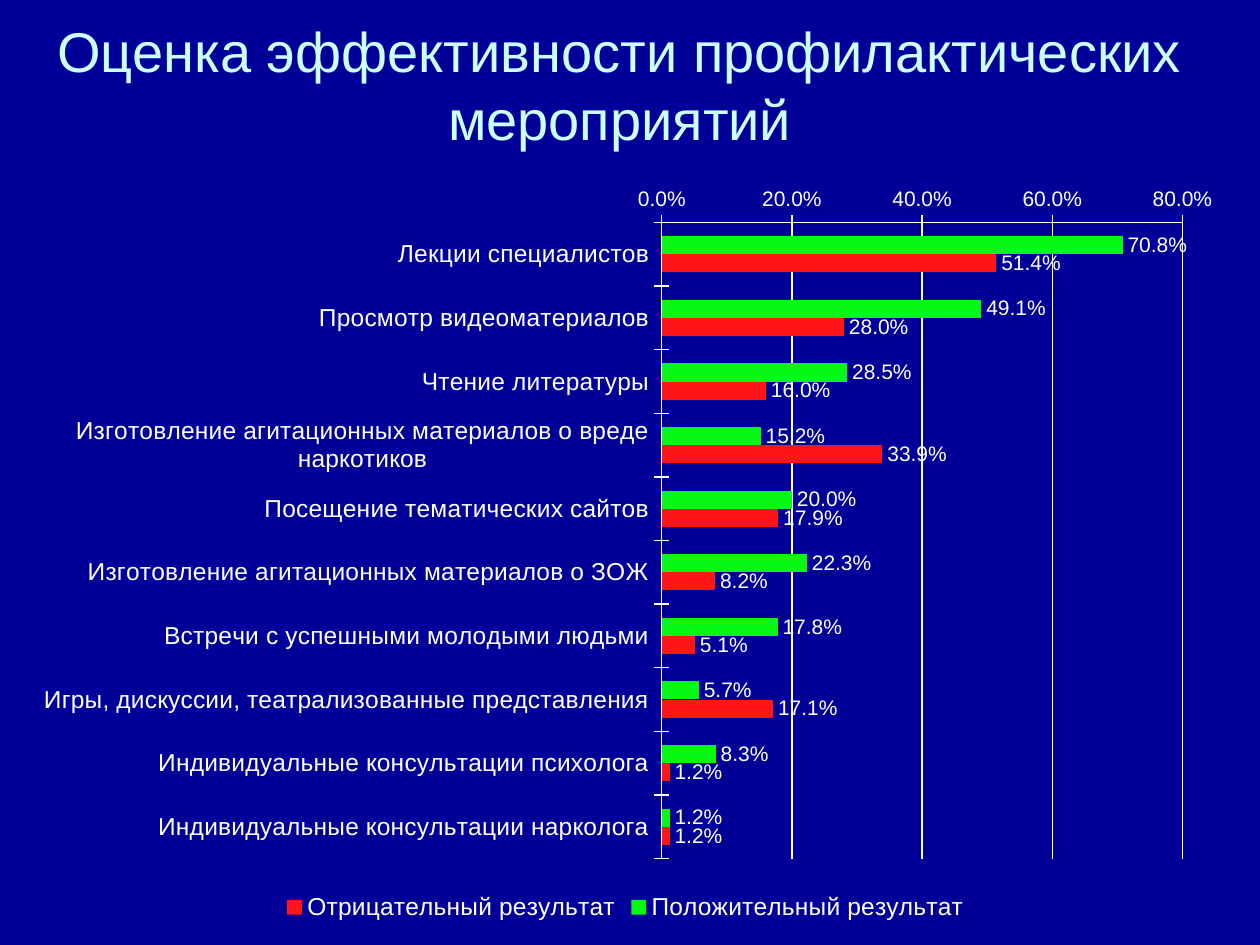
from dataclasses import dataclass

from lxml import etree
from pptx import Presentation
from pptx.chart.data import CategoryChartData
from pptx.dml.color import RGBColor
from pptx.enum import chart as ch, text
from pptx.util import Inches, Pt


@dataclass(frozen=True)
class Theme:
    font: str = "Arial"
    background: str = "000099"
    title: str = "CCFFFF"
    ink: str = "FFFFFF"
    positive: str = "07F913"
    negative: str = "FF1515"
    title_size: int = 32
    chart_size: int = 18
    label_size: int = 14
    value_size: int = 12
    line: float = 0.75


THEME = Theme()
WIDTH, HEIGHT = 10, 7.5
PERCENT = "0.0%"

# Regions as shares of the slide: left, top, width, height
TITLE_BOX = (0.023, 0.021, 0.938, 0.136)
CHART_BOX = (0.016, 0.188, 0.961, 0.792)
# Bar area as shares of the chart
PLOT_BOX = {"x": 0.53, "y": 0.06, "w": 0.43, "h": 0.85}

# Measure, positive result, negative result
RESULTS = [
    ("Лекции специалистов", 0.708, 0.514),
    ("Просмотр видеоматериалов", 0.491, 0.28),
    ("Чтение литературы", 0.285, 0.16),
    ("Изготовление агитационных материалов о вреде наркотиков", 0.152, 0.339),
    ("Посещение тематических сайтов", 0.2, 0.179),
    ("Изготовление агитационных материалов о ЗОЖ", 0.223, 0.082),
    ("Встречи с успешными молодыми людьми", 0.178, 0.051),
    ("Игры, дискуссии, театрализованные представления", 0.057, 0.171),
    ("Индивидуальные консультации психолога", 0.083, 0.012),
    ("Индивидуальные консультации нарколога", 0.012, 0.012),
]


def to_lengths(box):
    return [Inches(share * side) for share, side in zip(box, (WIDTH, HEIGHT) * 2)]


def set_attributes(target, values):
    for name, value in values.items():
        setattr(target, name, value)


def style_font(font, size, color=THEME.ink):
    set_attributes(font, {"name": THEME.font, "size": Pt(size), "bold": False})
    font.color.rgb = RGBColor.from_string(color)


def style_line(line):
    line.color.rgb = RGBColor.from_string(THEME.ink)
    line.width = Pt(THEME.line)


def place_title(slide, box, wording):
    title = slide.shapes.title
    set_attributes(title, dict(zip(("left", "top", "width", "height"), to_lengths(box))))
    set_attributes(title.text_frame, {
        "text": wording, "word_wrap": True,
        "vertical_anchor": text.MSO_ANCHOR.MIDDLE,
        "auto_size": text.MSO_AUTO_SIZE.NONE})
    heading = title.text_frame.paragraphs[0]
    heading.alignment = text.PP_ALIGN.CENTER
    style_font(heading.runs[0].font, THEME.title_size, THEME.title)


def fix_plot_area(chart, shares):
    plot_area = chart.plots[0]._element.getparent()
    namespace = etree.QName(plot_area).namespace
    for old in plot_area.findall(f"{{{namespace}}}layout"):
        plot_area.remove(old)
    layout = etree.Element(f"{{{namespace}}}layout")
    manual = etree.SubElement(layout, f"{{{namespace}}}manualLayout")
    settings = {"layoutTarget": "inner", "xMode": "edge", "yMode": "edge", **shares}
    for name, value in settings.items():
        etree.SubElement(manual, f"{{{namespace}}}{name}", val=str(value))
    plot_area.insert(0, layout)


def place_results_chart(slide, box):
    measures, positive, negative = zip(*RESULTS)
    data = CategoryChartData(number_format=PERCENT)
    data.categories = measures
    data.add_series("Положительный результат", positive)
    data.add_series("Отрицательный результат", negative)
    chart = slide.shapes.add_chart(
        ch.XL_CHART_TYPE.BAR_CLUSTERED, *to_lengths(box), data).chart
    set_attributes(chart, {"has_title": False, "has_legend": True})
    style_font(chart.font, THEME.chart_size)
    fix_plot_area(chart, PLOT_BOX)

    # Legend
    set_attributes(chart.legend, {
        "position": ch.XL_LEGEND_POSITION.BOTTOM, "include_in_layout": False})
    style_font(chart.legend.font, THEME.label_size)

    # Axes: first measure on top, so the percentages run along the top
    measure_axis, percent_axis = chart.category_axis, chart.value_axis
    for axis, size in ((measure_axis, THEME.label_size), (percent_axis, THEME.value_size)):
        axis.major_tick_mark = ch.XL_TICK_MARK.CROSS
        style_font(axis.tick_labels.font, size)
        style_line(axis.format.line)
    measure_axis.reverse_order = True
    set_attributes(percent_axis, {
        "minimum_scale": 0, "maximum_scale": 0.8, "major_unit": 0.2,
        "has_major_gridlines": True})
    style_line(percent_axis.major_gridlines.format.line)
    set_attributes(percent_axis.tick_labels, {
        "number_format": PERCENT, "number_format_is_linked": False})

    # Bars and their values
    bars = chart.plots[0]
    set_attributes(bars, {"gap_width": 150, "overlap": 0, "vary_by_categories": False})
    for series, color in zip(bars.series, (THEME.positive, THEME.negative)):
        series.format.fill.solid()
        series.format.fill.fore_color.rgb = RGBColor.from_string(color)
        set_attributes(series.data_labels, {
            "show_value": True, "number_format": PERCENT,
            "number_format_is_linked": False,
            "position": ch.XL_LABEL_POSITION.OUTSIDE_END})
        style_font(series.data_labels.font, THEME.value_size)


def main():
    deck = Presentation()
    set_attributes(deck, {"slide_width": Inches(WIDTH), "slide_height": Inches(HEIGHT)})
    slide = deck.slides.add_slide(deck.slide_layouts.get_by_name("Title Only"))
    slide.background.fill.solid()
    slide.background.fill.fore_color.rgb = RGBColor.from_string(THEME.background)
    place_title(slide, TITLE_BOX, "Оценка эффективности профилактических мероприятий")
    place_results_chart(slide, CHART_BOX)
    deck.save("out.pptx")


if __name__ == "__main__":
    main()
